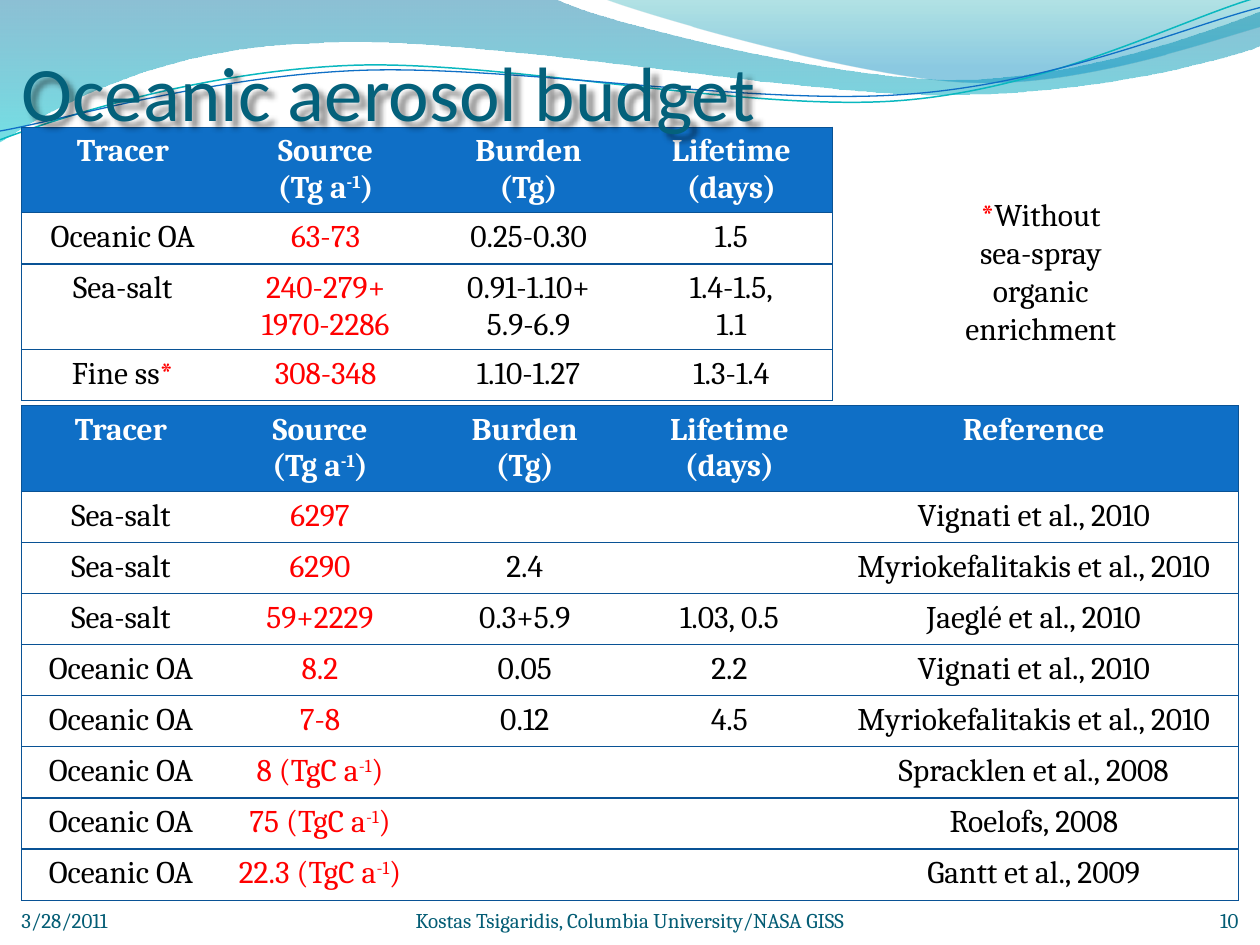
import pptx
import pptx.dml.color
import pptx.enum.text
import pptx.oxml
import pptx.oxml.ns
import pptx.util
from lxml import etree

RGBColor = pptx.dml.color.RGBColor
Inches, Pt = pptx.util.Inches, pptx.util.Pt
ALIGN, ANCHOR = pptx.enum.text.PP_ALIGN, pptx.enum.text.MSO_ANCHOR
qn = pptx.oxml.ns.qn

WHITE = RGBColor(0xFF, 0xFF, 0xFF)
BLACK = RGBColor(0, 0, 0)
RED = RGBColor(0xFF, 0, 0)
BLUE = RGBColor(0x0F, 0x6F, 0xC6)
BORDER = RGBColor(0x09, 0x52, 0x95)
TITLE = RGBColor(0x04, 0x61, 0x7B)
FOOTER = RGBColor(0x04, 0x5D, 0x75)
TEAL = RGBColor(0x0A, 0xB8, 0xBF)

WIDTH, HEIGHT = 10, 7.5
MARGIN = 0.17
LINE_ROW, DOUBLE_ROW = Pt(29.2), Inches(0.68)
UNITS = 100  # outline units to the inch
PLAIN_STYLE = "{2D5ABB26-0587-4C30-8999-92F81FD0307C}"
DRAWING = 'xmlns:a="http://schemas.openxmlformats.org/drawingml/2006/main"'

# Wave outlines: a start point, then lines (one point) or curves (three points)
UPPER_WAVE = [
    (0, 0), [(4.4, -0.01)],
    [(4.76, 0.17), (6.64, 0.63), (7.58, 0.63)], [(8.53, 0.63), (9.58, 0.26), (10, 0.09)],
    [(10.01, 0.36)],
    [(9.83, 0.44), (8.7, 0.76), (7.46, 0.75)], [(6.22, 0.75), (3.82, 0.28), (2.57, 0.34)],
    [(1.29, 0.36), (0.46, 0.83), (-0.01, 1.13)]]
RIGHT_WAVE = [
    (4.79, -0.01), [(5.09, 0.11), (6.82, 0.62), (7.69, 0.65)],
    [(8.56, 0.69), (9.61, 0.32), (10, 0.21)], [(10, 0)]]
TEAL_LINE = [
    (0, 1.11), [(0.48, 0.93), (1.58, 0.57), (2.77, 0.52)],
    [(3.95, 0.47), (5.93, 0.89), (7.13, 0.8)], [(8.33, 0.71), (9.38, 0.15), (9.98, -0.02)]]
BLUE_LINE = [
    (0, 1.04), [(0.47, 0.96), (1.64, 0.61), (2.83, 0.56)],
    [(4.03, 0.51), (5.97, 0.84), (7.17, 0.75)], [(8.36, 0.67), (9.41, 0.21), (10, 0.06)]]

# Table text: \v breaks a line, \n starts a paragraph, ^...^ is raised
HEADER = ["Tracer", "Source\v(Tg a^-1^)", "Burden\v(Tg)", "Lifetime\v(days)"]
MODEL_ROWS = [
    HEADER,
    ["Oceanic OA", "63-73", "0.25-0.30", "1.5"],
    ["Sea-salt", "240-279+\n1970-2286", "0.91-1.10+\n5.9-6.9", "1.4-1.5,\n1.1"],
    ["Fine ss*", "308-348", "1.10-1.27", "1.3-1.4"]]
LITERATURE_ROWS = [
    HEADER + ["Reference"],
    ["Sea-salt", "6297", "", "", "Vignati et al., 2010"],
    ["Sea-salt", "6290", "2.4", "", "Myriokefalitakis et al., 2010"],
    ["Sea-salt", "59+2229", "0.3+5.9", "1.03, 0.5", "Jaeglé et al., 2010"],
    ["Oceanic OA", "8.2", "0.05", "2.2", "Vignati et al., 2010"],
    ["Oceanic OA", "7-8", "0.12", "4.5", "Myriokefalitakis et al., 2010"],
    ["Oceanic OA", "8 (TgC a^-1^)", "", "", "Spracklen et al., 2008"],
    ["Oceanic OA", "75 (TgC a^-1^)", "", "", "Roelofs, 2008"],
    ["Oceanic OA", "22.3 (TgC a^-1^)", "", "", "Gantt et al., 2009"]]


def write(frame, text, size=18, font="Cambria", color=BLACK, bold=False,
          align=ALIGN.CENTER, star_bold=False):
    """Fill a text frame; asterisks turn red and ^...^ becomes superscript."""
    for row, content in enumerate(text.split("\n")):
        para = frame.paragraphs[0] if row == 0 else frame.add_paragraph()
        para.alignment = align
        for index, part in enumerate(content.replace("*", "^*^").split("^")):
            star = part == "*"
            for number, line in enumerate(part.split("\v")):
                if number:
                    para.add_line_break()
                if not line:
                    continue
                span = para.add_run()
                span.text = line
                span.font.size, span.font.name = Pt(size), font
                span.font.bold = star_bold if star else bold
                span.font.color.rgb = RED if star else color
                if index % 2 and not star:
                    span.font._element.set("baseline", "30000")


def add_text(page, text, left, top, width, height, inset=0, wrap=True,
             anchor=ANCHOR.BOTTOM, **style):
    box = page.shapes.add_textbox(*map(Inches, (left, top, width, height)))
    frame = box.text_frame
    frame.word_wrap, frame.vertical_anchor = wrap, anchor
    frame.margin_left = frame.margin_right = Inches(inset * 2)
    frame.margin_top = frame.margin_bottom = Inches(inset)
    write(frame, text, **style)


def add_outline(page, outline, closed):
    """Build a freeform through the segment ends, then bend the curved segments."""
    segments = [[(round(x * UNITS), round(y * UNITS)) for x, y in segment]
                for segment in [outline[:1]] + outline[1:]]
    ends = [segment[-1] for segment in segments]
    builder = page.shapes.build_freeform(*ends[0], scale=Inches(1) / UNITS)
    builder.add_line_segments(ends[1:], close=closed)
    shape = builder.convert_to_shape()
    left, top = (min(values) for values in zip(*ends))
    for edge, segment in zip(list(shape.element.iter(qn("a:lnTo"))), segments[1:]):
        if len(segment) == 3:
            points = "".join(f'<a:pt x="{x - left}" y="{y - top}"/>' for x, y in segment)
            edge.getparent().replace(edge, pptx.oxml.parse_xml(
                f"<a:cubicBezTo {DRAWING}>{points}</a:cubicBezTo>"))
    shape.shadow.inherit = False
    return shape


def add_wave(page, outline, *stops):
    """Each stop is a position, a colour and an opacity in percent."""
    shape = add_outline(page, outline, True)
    shape.line.fill.background()
    shape.fill.gradient()
    shape.fill.gradient_angle = 270
    for stop, (position, color, _) in zip(shape.fill.gradient_stops, stops):
        stop.position, stop.color.rgb = position, RGBColor.from_string(color)
    for tint, (_, _, opacity) in zip(shape.element.spPr.iter(qn("a:srgbClr")), stops):
        etree.SubElement(tint, qn("a:alpha")).set("val", str(opacity * 1000))


def add_wave_line(page, outline, color, weight):
    shape = add_outline(page, outline, False)
    shape.fill.background()
    shape.line.color.rgb, shape.line.width = color, Pt(weight)


def add_borders(cell, sides):
    for side in sides:
        cell._tc.get_or_add_tcPr().append(pptx.oxml.parse_xml(
            f'<a:ln{side} {DRAWING} w="9525"><a:solidFill><a:srgbClr val="{BORDER}"/>'
            f'</a:solidFill></a:ln{side}>'))


def add_budget(page, rows, top, widths):
    heights = [DOUBLE_ROW if any("\v" in t or "\n" in t for t in row) else LINE_ROW
               for row in rows]
    holder = page.shapes.add_table(len(rows), len(widths), Inches(MARGIN), Inches(top),
                                   Inches(sum(widths)), sum(heights))
    table = holder.table
    table.horz_banding = False
    next(holder.element.iter(qn("a:tableStyleId"))).text = PLAIN_STYLE
    for column, width in zip(table.columns, widths):
        column.width = Inches(width)
    for r, (row, height) in enumerate(zip(rows, heights)):
        table.rows[r].height = height
        for c, text in enumerate(row):
            cell = table.cell(r, c)
            add_borders(cell, "L" * (c == 0) + "R" * (c == len(row) - 1) + "TB")
            if r == 0:
                cell.fill.solid()
                cell.fill.fore_color.rgb = BLUE
                color = WHITE
            else:
                cell.fill.background()
                color = RED if c == 1 else BLACK
            write(cell.text_frame, text, color=color, bold=r == 0, star_bold=True)


def set_title(page, text):
    title = page.shapes.title
    title.left, title.top = Inches(MARGIN), Inches(MARGIN)
    title.width, title.height = Inches(WIDTH - 2 * MARGIN), Inches(0.92)
    frame = title.text_frame
    frame.vertical_anchor = ANCHOR.BOTTOM
    frame.margin_left = frame.margin_right = frame.margin_bottom = 0
    write(frame, text, size=44, font="Calibri", color=TITLE, align=ALIGN.LEFT)
    # Soft shadow behind the letters
    title.element.spPr.append(pptx.oxml.parse_xml(
        f'<a:effectLst {DRAWING}><a:outerShdw blurRad="38100" dist="50800" dir="2700000">'
        '<a:srgbClr val="000000"><a:alpha val="43000"/></a:srgbClr>'
        '</a:outerShdw></a:effectLst>'))
    title.element.getparent().append(title.element)  # in front of the tables


def main():
    deck = pptx.Presentation()
    deck.slide_width, deck.slide_height = Inches(WIDTH), Inches(HEIGHT)
    page = deck.slides.add_slide(deck.slide_layouts[5])

    # Waves along the top
    add_wave(page, UPPER_WAVE, (0, "0074A1", 45), (1, "00C6CF", 55))
    add_wave(page, RIGHT_WAVE, (0, "00A1A9", 30), (0.8, "008BBF", 45))
    add_wave_line(page, TEAL_LINE, TEAL, 0.85)
    add_wave_line(page, BLUE_LINE, BLUE, 0.75)

    # Budget tables and title
    add_budget(page, MODEL_ROWS, 1.01, [1.61] * 4)
    add_budget(page, LITERATURE_ROWS, 3.22, [1.58, 1.58, 1.67, 1.58, 3.25])
    set_title(page, "Oceanic aerosol budget")

    # Footer
    footer = dict(top=7, height=0.4, size=12, color=FOOTER)
    add_text(page, "3/28/2011", MARGIN, width=0.83, align=ALIGN.LEFT, **footer)
    add_text(page, "Kostas Tsigaridis, Columbia University/NASA GISS", 1, width=8, **footer)
    add_text(page, "10", 9, width=0.83, align=ALIGN.RIGHT, **footer)

    # Table note
    add_text(page, "*Without\vsea-spray\vorganic\venrichment", 7.52, 1.5, 1.48, 1.31,
             inset=0.05, wrap=False, anchor=ANCHOR.TOP)
    deck.save("out.pptx")


if __name__ == "__main__":
    main()
